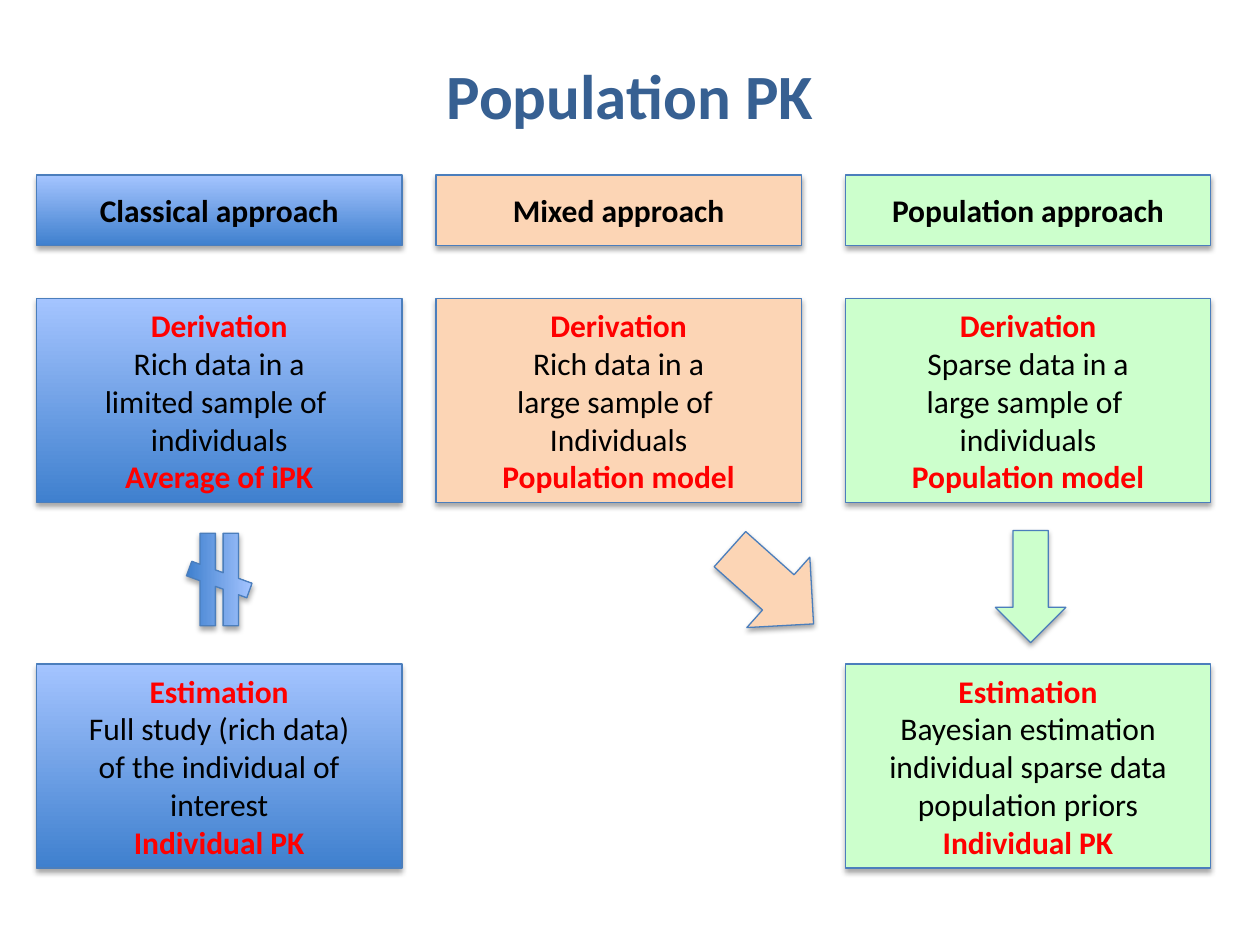
from lxml import etree
from pptx import Presentation
from pptx.dml.color import RGBColor
from pptx.enum.shapes import MSO_SHAPE
from pptx.enum.text import MSO_ANCHOR, PP_ALIGN
from pptx.oxml.ns import qn
from pptx.util import Inches, Pt

RECT = MSO_SHAPE.RECTANGLE
DOWN_ARROW = MSO_SHAPE.DOWN_ARROW
NOT_EQUAL = MSO_SHAPE.MATH_NOT_EQUAL
CENTER = PP_ALIGN.CENTER
MIDDLE, BOTTOM = MSO_ANCHOR.MIDDLE, MSO_ANCHOR.BOTTOM

THEME = {
    "font": "Calibri", "title_size": 36, "body_size": 18, "line_width": 0.75,
    "title": "376092", "text": "000000", "accent": "FF0000", "line": "4B7EBC",
    "classical": ("3F80CE", "A4C4FF"),  # bottom to top
    "population": "CCFFCC", "mixed": "FCD5B5",
}

TITLE = "Population PK"
# The first and last line of each detail box are highlighted.
COLUMNS = [
    {
        "left": 0.29, "fill": THEME["classical"], "heading": "Classical approach",
        "details": [
            ["Derivation", "Rich data in a", "limited sample of ", "individuals",
             "Average of iPK"],
            ["Estimation", "Full study (rich data)", "of the individual of interest",
             "Individual PK"],
        ],
        "symbol": (NOT_EQUAL, (1.24, 4.34, 1, 0.52), 90),
    },
    {
        "left": 6.71, "fill": THEME["population"], "heading": "Population approach",
        "details": [
            ["Derivation", "Sparse data in a", "large sample of ", "individuals",
             "Population model"],
            ["Estimation", "Bayesian estimation",
             "individual sparse data population priors", "Individual PK"],
        ],
        "symbol": (DOWN_ARROW, (7.9, 4.21, 0.56, 0.89), 0),
    },
    {
        "left": 3.46, "fill": THEME["mixed"], "heading": "Mixed approach",
        "details": [
            ["Derivation", "Rich data in a", "large sample of ", "Individuals",
             "Population model"],
        ],
        "symbol": (DOWN_ARROW, (5.75, 4.21, 0.75, 0.89), 311.8),
    },
]
BOX_W = 2.9
HEADING_TOP, HEADING_H = 1.39, 0.56
DETAIL_TOP, DETAIL_H, DETAIL_STEP = 2.37, 1.62, 2.9


def rgb(value):
    return RGBColor.from_string(value)


def add_shadow(sp):
    """Give the shape a soft shadow straight below it."""
    sp.shadow.inherit = False
    effects = sp._element.spPr.find(qn("a:effectLst"))
    shadow = etree.SubElement(
        effects, qn("a:outerShdw"), blurRad=str(Pt(3.1)), dist=str(Pt(1.8)),
        dir="5400000", rotWithShape="0")
    color = etree.SubElement(shadow, qn("a:srgbClr"), val="000000")
    etree.SubElement(color, qn("a:alpha"), val="35000")


def add_styled_shape(group, kind, place, fill):
    sp = group.shapes.add_shape(kind, *map(Inches, place))
    if isinstance(fill, tuple):
        sp.fill.gradient()
        sp.fill.gradient_angle = 90
        for stop, color in zip(sp.fill.gradient_stops, fill):
            stop.color.rgb = rgb(color)
    else:
        sp.fill.solid()
        sp.fill.fore_color.rgb = rgb(fill)
    sp.line.color.rgb = rgb(THEME["line"])
    sp.line.width = Pt(THEME["line_width"])
    add_shadow(sp)
    return sp


def write(sp, lines, anchor):
    """Fill the shape with (text, size, colour, bold) lines."""
    tf = sp.text_frame
    tf.word_wrap = True
    tf.vertical_anchor = anchor
    for i, (text, size, color, bold) in enumerate(lines):
        p = tf.add_paragraph() if i else tf.paragraphs[0]
        p.text = text
        p.alignment = CENTER
        p.font.name = THEME["font"]
        p.font.size = Pt(size)
        p.font.bold = bold
        p.font.color.rgb = rgb(color)


def add_column(slide, column):
    group = slide.shapes.add_group_shape()
    left, fill, size = column["left"], column["fill"], THEME["body_size"]

    sp = add_styled_shape(group, RECT, (left, HEADING_TOP, BOX_W, HEADING_H), fill)
    write(sp, [(column["heading"], size, THEME["text"], True)], MIDDLE)

    for row, texts in enumerate(column["details"]):
        top = DETAIL_TOP + row * DETAIL_STEP
        sp = add_styled_shape(group, RECT, (left, top, BOX_W, DETAIL_H), fill)
        lines = []
        for i, text in enumerate(texts):
            key = i in (0, len(texts) - 1)
            lines.append((text, size, THEME["accent" if key else "text"], key))
        write(sp, lines, MIDDLE)

    kind, place, rotation = column["symbol"]
    add_styled_shape(group, kind, place, fill).rotation = rotation


def main():
    prs = Presentation()
    prs.slide_width, prs.slide_height = Inches(10), Inches(7.5)
    slide = prs.slides.add_slide(prs.slide_layouts[5])
    title = slide.shapes.title
    title.left, title.top = Inches(0), Inches(0.3)
    title.width, title.height = Inches(10), Inches(0.8)
    write(title, [(TITLE, THEME["title_size"], THEME["title"], True)], BOTTOM)
    for column in COLUMNS:
        add_column(slide, column)
    prs.save("out.pptx")


if __name__ == "__main__":
    main()
